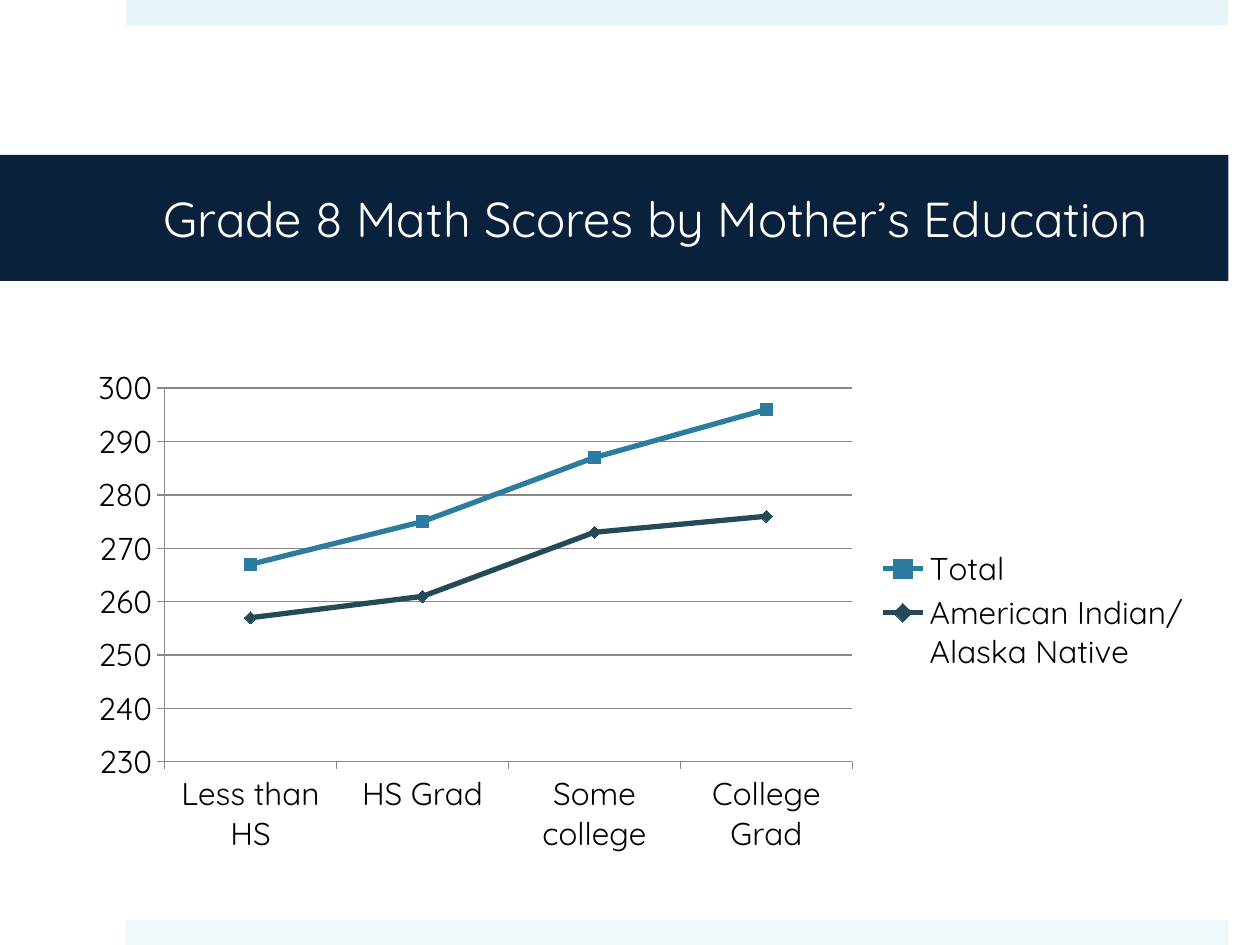
"""Build a slide with a line chart of grade 8 math scores by mother's education."""
from lxml import etree
from pptx import Presentation
from pptx.chart.data import CategoryChartData
from pptx.dml.color import RGBColor
from pptx.enum.chart import (XL_CHART_TYPE, XL_LEGEND_POSITION,
                             XL_MARKER_STYLE, XL_TICK_MARK)
from pptx.enum.shapes import MSO_SHAPE
from pptx.enum.text import MSO_ANCHOR, PP_ALIGN
from pptx.oxml.ns import qn
from pptx.util import Inches, Pt

LINE_MARKERS = XL_CHART_TYPE.LINE_MARKERS
RIGHT = XL_LEGEND_POSITION.RIGHT
SQUARE, DIAMOND = XL_MARKER_STYLE.SQUARE, XL_MARKER_STYLE.DIAMOND
OUTSIDE = XL_TICK_MARK.OUTSIDE
RECT = MSO_SHAPE.RECTANGLE
MIDDLE, LEFT = MSO_ANCHOR.MIDDLE, PP_ALIGN.LEFT

WIDTH, HEIGHT = 10, 7.5
FONT = "Quicksand"
COLORS = {"top": "E6F4F8", "bottom": "EEF8FB", "band": "09213B",
          "title": "FFFFFF", "text": "000000", "axis": "888888"}
CATEGORIES = ["Less than HS", "HS Grad", "Some college", "College Grad"]
SERIES = [
    ("Total", [267, 275, 287, 296], "2C7C9F", SQUARE, 7),
    ("American Indian/ Alaska Native", [257, 261, 273, 276], "244A58", DIAMOND, 7),
]


def rgb(value):
    return RGBColor.from_string(value)


def place(parent, index, **shares):
    """Give a chart part a manual layout in shares of the chart area."""
    for old in parent.findall(qn("c:layout")):
        parent.remove(old)
    layout = etree.Element(qn("c:layout"))
    parent.insert(index, layout)
    manual = etree.SubElement(layout, qn("c:manualLayout"))
    if parent.tag == qn("c:plotArea"):
        etree.SubElement(manual, qn("c:layoutTarget")).set("val", "inner")
    for tag in ("xMode", "yMode"):
        etree.SubElement(manual, qn(f"c:{tag}")).set("val", "edge")
    for tag, share in shares.items():
        etree.SubElement(manual, qn(f"c:{tag}")).set("val", str(share))


class Deck:
    """Holds the style and the current slide, with lengths on a one-inch grid."""

    def __init__(self):
        self.prs = Presentation()
        self.prs.slide_width, self.prs.slide_height = Inches(WIDTH), Inches(HEIGHT)
        self.slide = self.prs.slides.add_slide(self.prs.slide_layouts[6])

    def bar(self, x, y, w, h, color):
        sp = self.slide.shapes.add_shape(RECT, *map(Inches, (x, y, w, h)))
        sp.shadow.inherit = False
        sp.fill.solid()
        sp.fill.fore_color.rgb = rgb(COLORS[color])
        sp.line.fill.background()
        return sp

    def title(self, x, y, w, h, text):
        tf = self.bar(x, y, w, h, "band").text_frame
        tf.word_wrap = True
        tf.vertical_anchor = MIDDLE
        tf.margin_left, tf.margin_right = Inches(1.3), Inches(0.3)
        p = tf.paragraphs[0]
        p.alignment = LEFT
        r = p.add_run()
        r.text = text
        r.font.name, r.font.size = FONT, Pt(28)
        r.font.color.rgb = rgb(COLORS["title"])

    def line_chart(self, x, y, w, h, categories, series):
        data = CategoryChartData()
        data.categories = categories
        for name, values, *_ in series:
            data.add_series(name, values)
        chart = self.slide.shapes.add_chart(
            LINE_MARKERS, *map(Inches, (x, y, w, h)), data).chart
        chart.has_title = False
        chart.font.name, chart.font.size = FONT, Pt(18)
        chart.font.color.rgb = rgb(COLORS["text"])
        chart.plots[0].vary_by_categories = False
        for ser, (_, _, color, marker, size) in zip(chart.plots[0].series, series):
            ser.smooth = False
            ser.format.line.width = Pt(3)
            ser.format.line.color.rgb = rgb(color)
            ser.marker.style, ser.marker.size = marker, size
            ser.marker.format.fill.solid()
            ser.marker.format.fill.fore_color.rgb = rgb(color)
            ser.marker.format.line.color.rgb = rgb(color)
        self.axes(chart)
        chart.has_legend = True
        chart.legend.position = RIGHT
        chart.legend.include_in_layout = False
        place(chart.element.find(".//" + qn("c:plotArea")), 0,
              x=0.08, y=0.06, w=0.61, h=0.74)
        place(chart.element.find(".//" + qn("c:legend")), 1,
              x=0.71, y=0.37, w=0.28, h=0.26)

    def axes(self, chart):
        val = chart.value_axis
        val.minimum_scale, val.maximum_scale, val.major_unit = 230, 300, 10
        val.has_major_gridlines = True
        for axis in (chart.category_axis, val):
            axis.major_tick_mark = OUTSIDE
        for part in (chart.category_axis, val, val.major_gridlines):
            part.format.line.width = Pt(0.75)
            part.format.line.color.rgb = rgb(COLORS["axis"])


def main():
    deck = Deck()
    edge = 0.2
    deck.bar(1, 0, 8.75, edge, "top")
    deck.bar(1, HEIGHT - edge, 8.75, edge, "bottom")
    deck.title(0, 1.23, 9.75, 1, "Grade 8 Math Scores by Mother’s Education")
    deck.line_chart(0.59, 2.84, 8.95, 4.01, CATEGORIES, SERIES)
    deck.prs.save("out.pptx")


if __name__ == "__main__":
    main()
